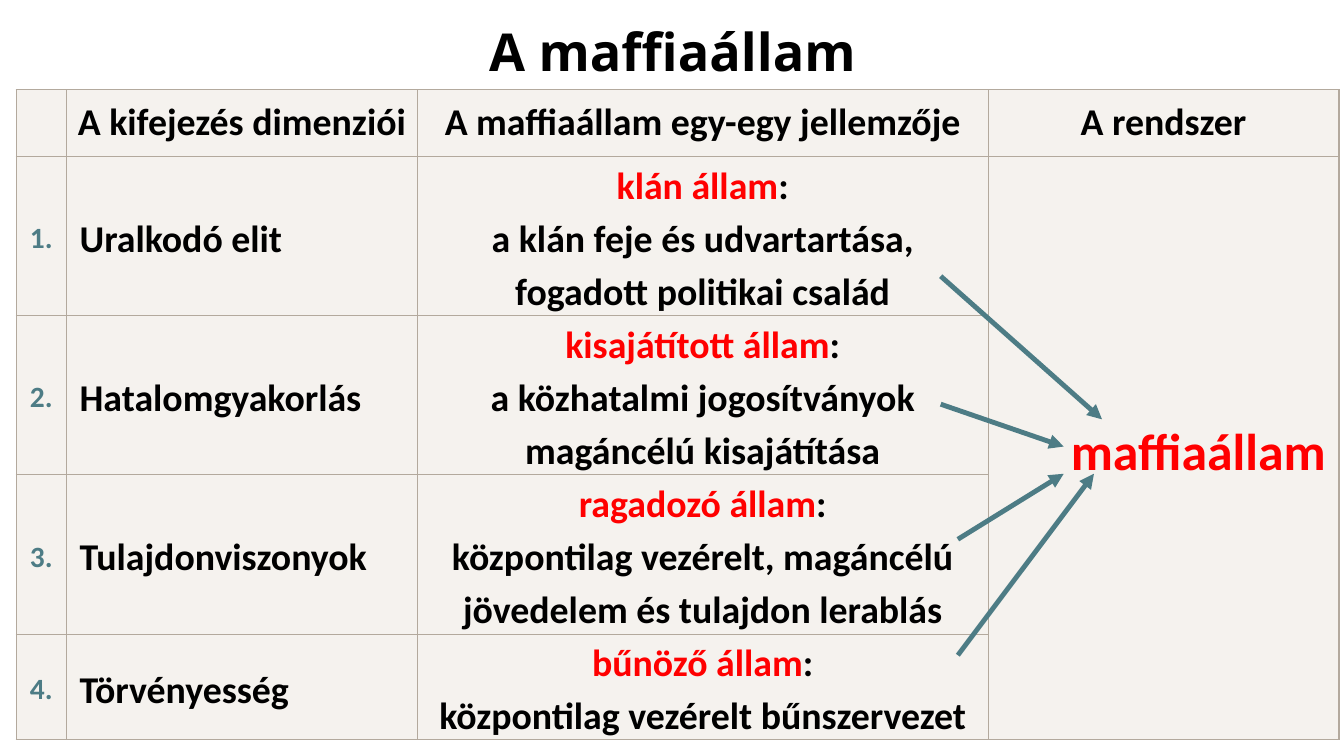
from lxml import etree
from pptx import Presentation
from pptx.dml.color import RGBColor
from pptx.enum.shapes import MSO_CONNECTOR
from pptx.enum.text import MSO_ANCHOR, PP_ALIGN
from pptx.oxml import parse_xml
from pptx.oxml.ns import nsdecls, qn
from pptx.util import Inches, Pt

MID = MSO_ANCHOR.MIDDLE
LEFT, CENTER = PP_ALIGN.LEFT, PP_ALIGN.CENTER
STRAIGHT = MSO_CONNECTOR.STRAIGHT

WIDE, HIGH = 13.33, 7.5
BLACK, RED, TEAL = "000000", "FF0000", "4D7C85"
SAND, EDGE = "EFEAE4", "B3A99D"
BODY, HEAD = "Calibri", "Open Sans"

COLS = [0.5, 3.48, 5.66, 3.48]
ROWS = [0.66, 1.58, 1.58, 1.58, 1.05]
HEADS = ["A kifejezés dimenziói", "A maffiaállam egy-egy jellemzője", "A rendszer"]
STATES = [
    ("Uralkodó elit", "klán állam",
     "a klán feje és udvartartása, fogadott politikai család"),
    ("Hatalomgyakorlás", "kisajátított állam",
     "a közhatalmi jogosítványok magáncélú kisajátítása"),
    ("Tulajdonviszonyok", "ragadozó állam",
     "központilag vezérelt, magáncélú jövedelem és tulajdon lerablás"),
    ("Törvényesség", "bűnöző állam", "központilag vezérelt bűnszervezet"),
]
ARROWS = [  # start x, y, end x, y, measured from the table corner
    (9.17, 1.85, 10.77, 3.27),
    (9.17, 3.12, 10.39, 3.54),
    (9.34, 4.46, 10.39, 3.81),
    (9.34, 5.61, 10.69, 3.81),
]


def color(code):
    return RGBColor.from_string(code)


def style(para, size, code=BLACK, align=CENTER, space=None, face=BODY):
    para.alignment = align
    if space:
        para.line_spacing = space
    font = para.font
    font.name, font.size, font.bold = face, Pt(size), True
    font.color.rgb = color(code)


def inset(part, side, top):
    part.margin_left = part.margin_right = Inches(side)
    part.margin_top = part.margin_bottom = Inches(top)


def title(slide, box, text):
    frame = slide.shapes.add_textbox(*map(Inches, box)).text_frame
    frame.word_wrap = True
    frame.vertical_anchor = MID
    inset(frame, 0.13, 0.07)
    frame.text = text
    style(frame.paragraphs[0], 37.3, face=HEAD)


def finish(cell, row, col):
    """Outline and tint one cell; the outer edge is slightly heavier."""
    outer = {"L": col == 0, "R": col == len(COLS) - 1,
             "T": row == 0, "B": row == len(ROWS) - 1}
    props = cell._tc.get_or_add_tcPr()
    for side, edge in outer.items():
        props.append(parse_xml(
            f'<a:ln{side} {nsdecls("a")} w="{Pt(1 if edge else 0.75)}">'
            f'<a:solidFill><a:srgbClr val="{EDGE}"/></a:solidFill></a:ln{side}>'))
    cell.fill.solid()
    cell.fill.fore_color.rgb = color(SAND)
    tint = props.find(qn("a:solidFill")).find(qn("a:srgbClr"))
    etree.SubElement(tint, qn("a:alpha")).set("val", "60000")
    cell.vertical_anchor = MID
    inset(cell, 0.1, 0)


def write(cell, text, size, **look):
    cell.text = text
    style(cell.text_frame.paragraphs[0], size, **look)


def matrix(slide, box):
    grid = slide.shapes.add_table(len(ROWS), len(COLS), *map(Inches, box)).table
    for col, width in zip(grid.columns, COLS):
        col.width = Inches(width)
    for row, height in zip(grid.rows, ROWS):
        row.height = Inches(height)
    for r in range(len(ROWS)):
        for c in range(len(COLS)):
            finish(grid.cell(r, c), r, c)

    # Header row
    for c, text in enumerate(HEADS, 1):
        write(grid.cell(0, c), text, 27)
    inset(grid.cell(0, 1), 0.07, 0.07)

    # Numbered dimensions and their states
    for r, (name, state, detail) in enumerate(STATES, 1):
        write(grid.cell(r, 0), f"{r}.", 21, code=TEAL, space=1.15)
        write(grid.cell(r, 1), name, 27, align=LEFT, space=1.15)
        inset(grid.cell(r, 1), 0.13, 0.07)
        frame = grid.cell(r, 2).text_frame
        lead = frame.paragraphs[0]
        run = lead.add_run()
        run.text = state
        run.font.color.rgb = color(RED)
        lead.add_run().text = ":"
        frame.add_paragraph().text = detail
        for para in frame.paragraphs:
            style(para, 27, space=1.15)

    # System cell spanning all states
    system = grid.cell(1, 3)
    system.merge(grid.cell(len(STATES), 3))
    write(system, "maffiaállam", 37, code=RED, space=1.15)
    props = system.text_frame.paragraphs[0]._p.get_or_add_pPr()
    props.set("marL", str(Inches(0.69)))
    props.set("indent", "0")


def arrows(slide, box):
    left, top = box[:2]
    for x1, y1, x2, y2 in ARROWS:
        ends = left + x1, top + y1, left + x2, top + y2
        link = slide.shapes.add_connector(STRAIGHT, *map(Inches, ends))
        link.line.color.rgb = color(TEAL)
        link.line.width = Pt(3.5)
        etree.SubElement(link.line._get_or_add_ln(), qn("a:tailEnd")).set("type", "triangle")
        etree.SubElement(link._element.spPr, qn("a:effectLst"))


def main():
    deck = Presentation()
    deck.slide_width, deck.slide_height = Inches(WIDE), Inches(HIGH)
    slide = deck.slides.add_slide(deck.slide_layouts[6])
    title(slide, (0.16, -0.02, 13.02, 1.05), "A maffiaállam")
    area = (0.16, 0.89, sum(COLS), sum(ROWS))
    matrix(slide, area)
    arrows(slide, area)
    deck.save("out.pptx")


if __name__ == "__main__":
    main()
